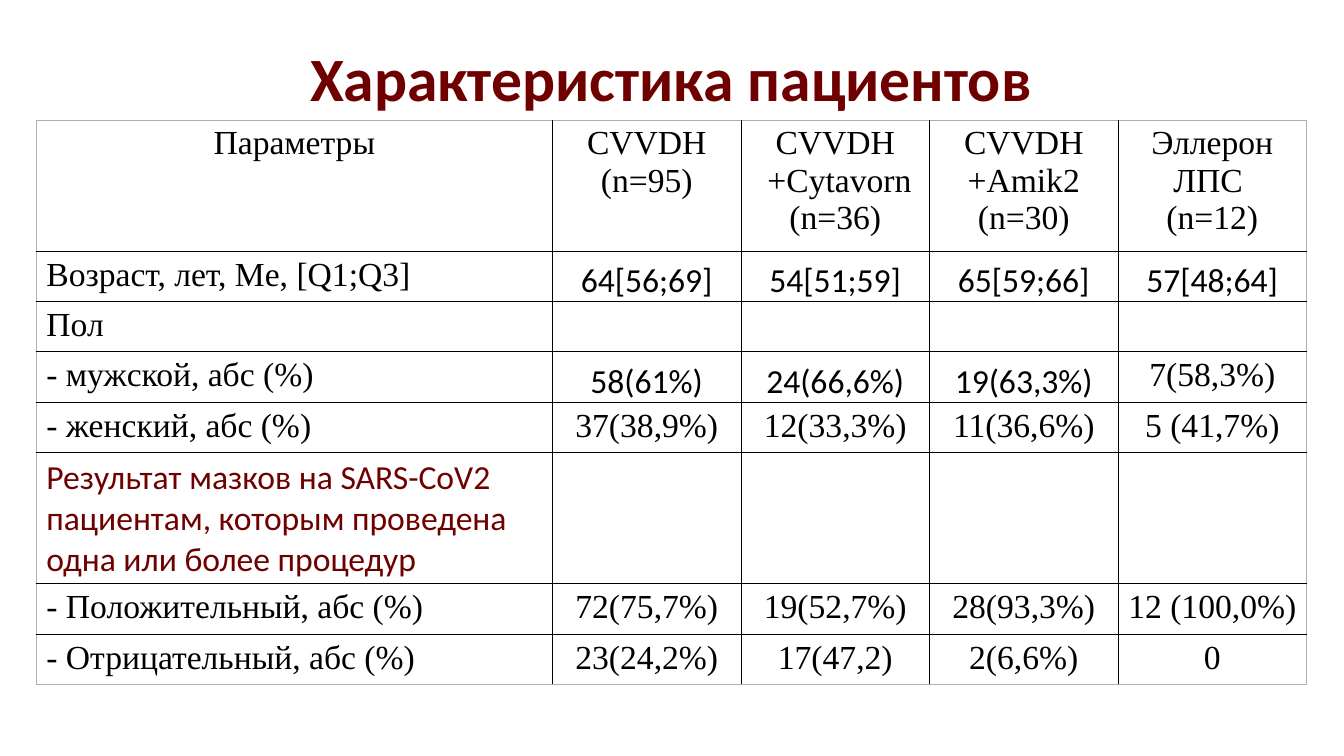
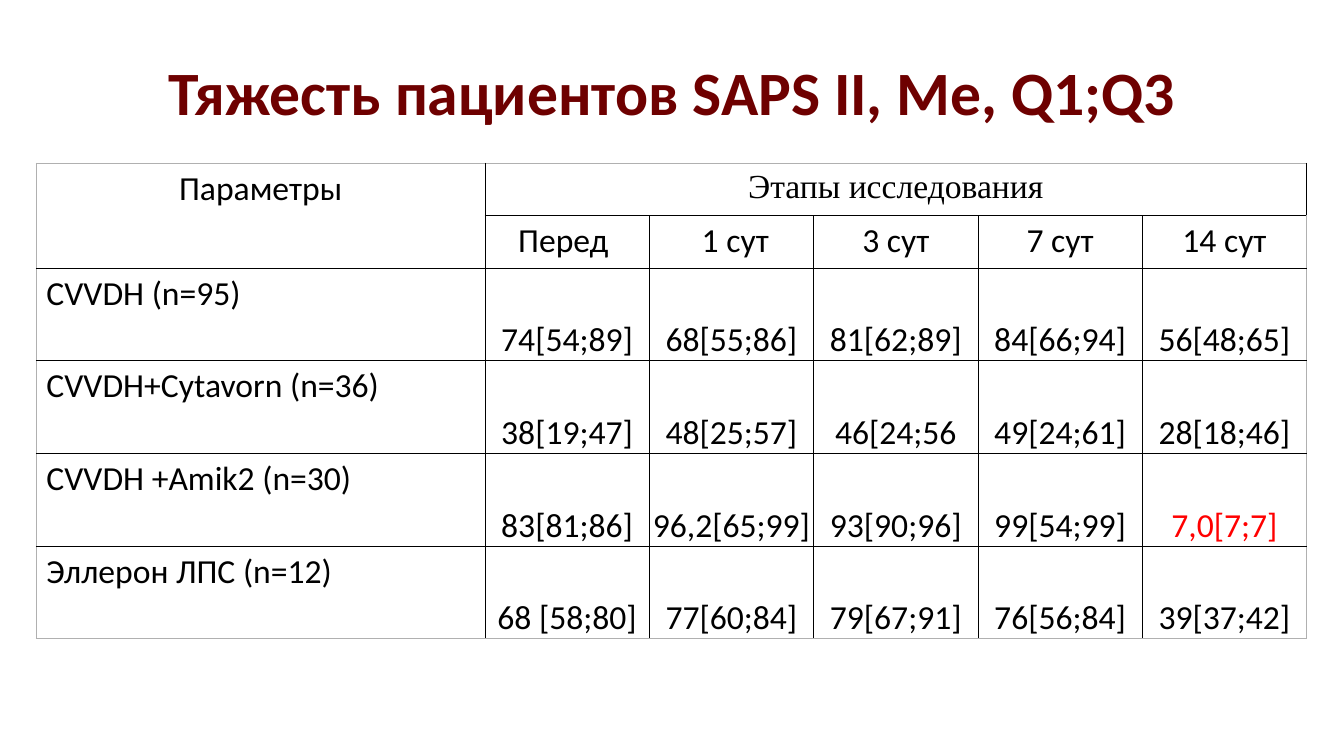
from dataclasses import dataclass, replace

from lxml.etree import SubElement
from pptx import Presentation
from pptx.dml.color import RGBColor
from pptx.enum.text import MSO_ANCHOR as Anchor, PP_ALIGN as Align
from pptx.oxml.ns import qn
from pptx.util import Inches, Pt


@dataclass(frozen=True)
class Theme:
    """Colours, fonts and sizes shared by the slides."""
    accent: str = "6E0000"
    ink: str = "000000"
    alert: str = "FF0000"
    frame: str = "B0B0B0"
    sans: str = "Calibri"
    serif: str = "Times New Roman"
    title_size: int = 44
    cell_size: int = 24
    border_width: float = 0.75


@dataclass(frozen=True)
class CellStyle:
    """Look of the text in one table cell."""
    font: str
    color: str
    align: Align = Align.CENTER
    tight: bool = False


THEME = Theme()
SERIF = CellStyle(THEME.serif, THEME.ink)
SERIF_LABEL = replace(SERIF, align=Align.LEFT)
SANS = CellStyle(THEME.sans, THEME.ink)
SANS_LABEL = replace(SANS, align=Align.LEFT)
ACCENT_LABEL = replace(SANS_LABEL, color=THEME.accent)
SANS_VALUE = replace(SANS, tight=True)
ALERT_VALUE = replace(SANS_VALUE, color=THEME.alert)


def format_text(frame, align, font, size, color, bold=False):
    """Align every paragraph and format every run of a text frame."""
    for para in frame.paragraphs:
        para.alignment = align
        for span in para.runs:
            span.font.name = font
            span.font.size = Pt(size)
            span.font.bold = bold
            span.font.color.rgb = RGBColor.from_string(color)


def add_title(page, text, box):
    """Place the slide title in the given box."""
    frame = page.shapes.add_textbox(*map(Inches, box)).text_frame
    frame.word_wrap = True
    frame.vertical_anchor = Anchor.MIDDLE
    frame.text = text
    format_text(frame, Align.CENTER, THEME.sans, THEME.title_size, THEME.accent, True)


def add_borders(cell, outer):
    """Draw thin lines around a cell, lighter on the sides marked as outer."""
    properties = cell._tc.get_or_add_tcPr()
    for side, is_outer in zip(("lnL", "lnR", "lnT", "lnB"), outer):
        line = SubElement(properties, qn(f"a:{side}"), w=str(Pt(THEME.border_width)))
        fill = SubElement(line, qn("a:solidFill"))
        SubElement(fill, qn("a:srgbClr"), val=THEME.frame if is_outer else THEME.ink)


def size_empty_cell(cell):
    """Give an empty cell the line height of the table text."""
    para = cell.text_frame.paragraphs[0]
    end = SubElement(para._p, qn("a:endParaRPr"), sz=str(THEME.cell_size * 100))
    SubElement(end, qn("a:latin"), typeface=THEME.sans)


def fill_cell(cell, text, style):
    """Write one cell in the given style."""
    if style.tight:
        cell.vertical_anchor = Anchor.BOTTOM
        cell.margin_left = cell.margin_right = cell.margin_top = Inches(0.01)
        cell.margin_bottom = 0
    cell.text_frame.text = text
    format_text(cell.text_frame, style.align, style.font, THEME.cell_size, style.color)


def add_grid(page, box, widths, heights, rows, style_at, merges=()):
    """Place a bordered table; style_at gives the style of a row and column."""
    holder = page.shapes.add_table(len(heights), len(widths), *map(Inches, box))
    table = holder.table
    table.first_row = table.horz_banding = False
    for column, width in zip(table.columns, widths):
        column.width = Inches(width)
    for row, height in zip(table.rows, heights):
        row.height = Inches(height)
    holder.height = Inches(box[3])
    for first, last in merges:
        table.cell(*first).merge(table.cell(*last))
    last_row, last_column = len(heights) - 1, len(widths) - 1
    for r, texts in enumerate(rows):
        for c in range(len(widths)):
            cell = table.cell(r, c)
            add_borders(cell, (c == 0, c == last_column, r == 0, r == last_row))
            cell.fill.background()
            if c < len(texts) and texts[c]:
                fill_cell(cell, texts[c], style_at(r, c))
            elif not cell.is_spanned:
                size_empty_cell(cell)


def patient_style(row, column):
    """Choose the cell style of the patient table."""
    if row == 0:
        return SERIF
    if column == 0:
        return ACCENT_LABEL if row == 5 else SERIF_LABEL
    if row == 1 or (row == 3 and column < 4):
        return SANS_VALUE
    return SERIF


def severity_style(row, column):
    """Choose the cell style of the severity table."""
    if row < 2:
        return SERIF if (row, column) == (0, 1) else SANS
    if column == 0:
        return SANS_LABEL
    return ALERT_VALUE if (row, column) == (4, 5) else SANS_VALUE


def build_patients(page):
    """Build the slide on patient characteristics."""
    add_title(page, "Характеристика пациентов", (0.66, 0.3, 12, 0.93))
    rows = [
        ("Параметры", "CVVDH\n(n=95)", "CVVDH\n +Cytavorn\n(n=36)",
         "CVVDH +Amik2\n(n=30)", "Эллерон ЛПС \n(n=12)"),
        ("Возраст, лет, Me, [Q1;Q3]", "64[56;69]", "54[51;59]", "65[59;66]", "57[48;64]"),
        ("Пол",),
        ("- мужcкой, абс (%)", "58(61%)", "24(66,6%)", "19(63,3%)", "7(58,3%)"),
        ("- женский, абс (%)", "37(38,9%)", "12(33,3%)", "11(36,6%)", "5 (41,7%)"),
        ("Результат мазков на SARS-CoV2 пациентам, которым проведена одна или более процедур",),
        ("- Положительный, абс (%)", "72(75,7%)", "19(52,7%)", "28(93,3%)", "12 (100,0%)"),
        ("- Отрицательный, абс (%)", "23(24,2%)", "17(47,2)", "2(6,6%)", "0"),
    ]
    heights = [0.45, 0, 0.45, 0.45, 0.45, 1.1, 0.45, 0.45]
    add_grid(page, (0.36, 1.19, 12.6, 5.6), [5.12] + [1.87] * 4, heights,
             rows, patient_style)


def build_severity(page):
    """Build the slide on patient severity over time."""
    add_title(page, "Тяжесть пациентов SAPS II, Me, Q1;Q3", (0.67, 0.53, 12, 0.75))
    rows = [
        ("Параметры", "Этапы исследования"),
        ("", "Перед ", " 1 сут", "3 сут", "7 сут", "14 сут"),
        ("CVVDH (n=95)", "74[54;89]", "68[55;86]", "81[62;89]", "84[66;94]", "56[48;65]"),
        ("CVVDH+Cytavorn (n=36)", "38[19;47]", "48[25;57]", "46[24;56", "49[24;61]", "28[18;46]"),
        ("CVVDH +Amik2 (n=30)", "83[81;86]", "96,2[65;99]", "93[90;96]", "99[54;99]", "7,0[7;7]"),
        ("Эллерон ЛПС (n=12)", "68 [58;80]", "77[60;84]", "79[67;91]", "76[56;84]", "39[37;42]"),
    ]
    merges = [((0, 0), (1, 0)), ((0, 1), (0, 5))]
    add_grid(page, (0.36, 1.62, 12.6, 4.72), [4.45] + [1.63] * 5,
             [0.52] * 2 + [0.92] * 4, rows, severity_style, merges)


def main():
    """Build and save the deck."""
    deck = Presentation()
    deck.slide_width, deck.slide_height = Inches(13.33), Inches(7.5)
    for build in (build_patients, build_severity):
        build(deck.slides.add_slide(deck.slide_layouts[6]))
    deck.save("out.pptx")


if __name__ == "__main__":
    main()
